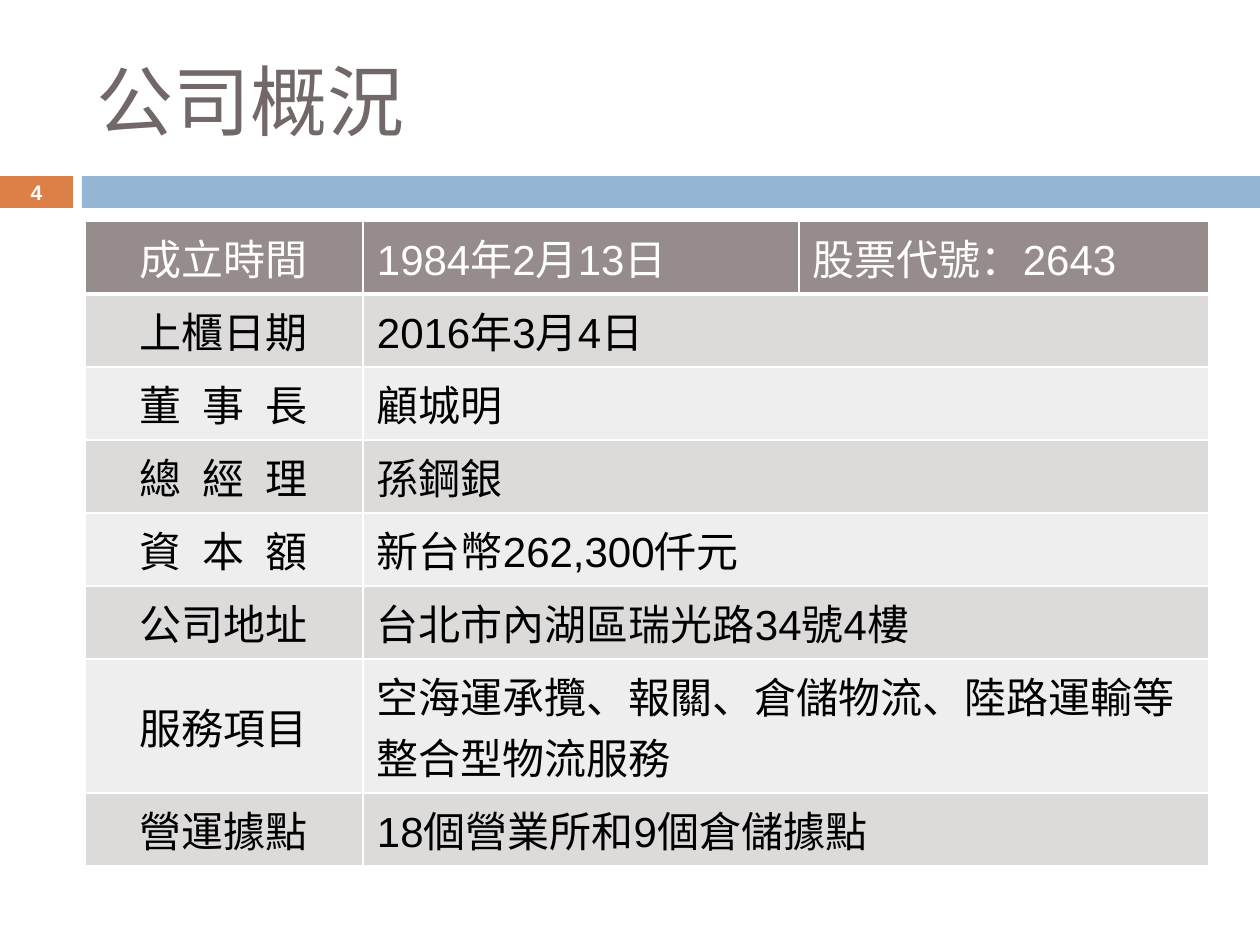
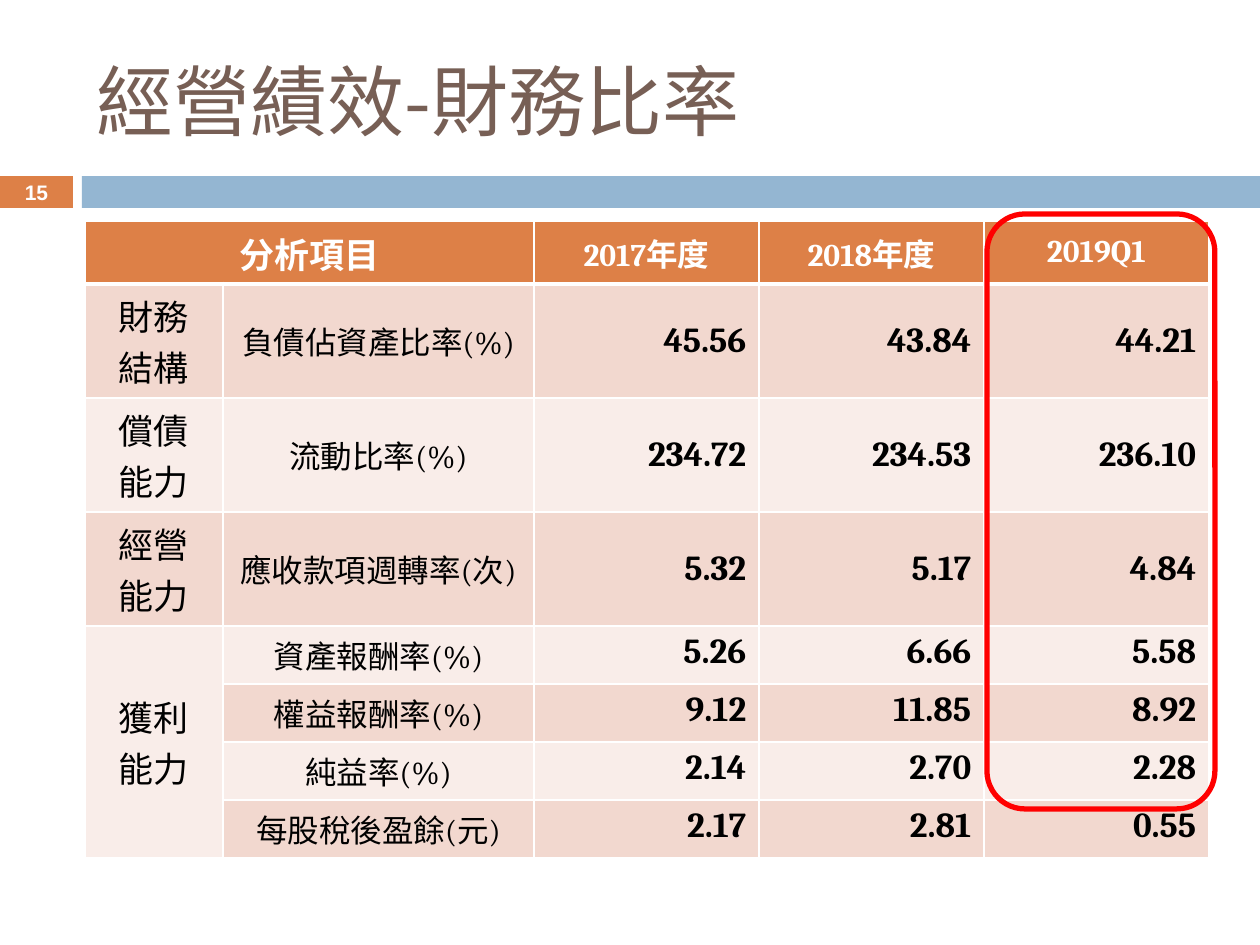
from lxml import etree
from pptx import Presentation
from pptx.dml.color import RGBColor
from pptx.enum.shapes import MSO_SHAPE
from pptx.enum.text import MSO_ANCHOR, MSO_AUTO_SIZE, PP_ALIGN
from pptx.oxml.ns import qn
from pptx.util import Pt

RECT, ROUND_RECT = MSO_SHAPE.RECTANGLE, MSO_SHAPE.ROUNDED_RECTANGLE
MIDDLE, TOP = MSO_ANCHOR.MIDDLE, MSO_ANCHOR.TOP
LEFT, CENTER, RIGHT = PP_ALIGN.LEFT, PP_ALIGN.CENTER, PP_ALIGN.RIGHT
NO_FIT = MSO_AUTO_SIZE.NONE

PX = 7257
CJK = "Noto Sans CJK SC"
WHITE = RGBColor(0xFF, 0xFF, 0xFF)
BLACK = RGBColor(0x00, 0x00, 0x00)
RED = RGBColor(0xFF, 0x00, 0x00)
ORANGE = RGBColor(0xDD, 0x80, 0x47)
BLUE = RGBColor(0x94, 0xB6, 0xD2)
TAUPE = RGBColor(0x72, 0x68, 0x68)
BROWN = RGBColor(0x77, 0x5F, 0x55)
GREY = RGBColor(0x96, 0x8C, 0x8C)
GREY_BANDS = RGBColor(0xDD, 0xDA, 0xDA), RGBColor(0xEF, 0xEE, 0xEE)
ORANGE_BANDS = RGBColor(0xF2, 0xD8, 0xCF), RGBColor(0xF9, 0xED, 0xE9)


def style(tf, size, font, color, bold=False, align=LEFT):
    for p in tf.paragraphs:
        p.alignment = align
        for r in p.runs:
            r.font.size = Pt(size)
            r.font.name = font
            r.font.bold = bold
            r.font.color.rgb = color
            etree.SubElement(r.font._element, qn("a:ea"), typeface=CJK)


def add_grid(s, rows, widths, heights, header, bands):
    frame = s.shapes.add_table(len(rows), len(widths), 85 * PX, 221 * PX,
                               sum(widths) * PX, sum(heights) * PX)
    table = frame.table
    for column, width in zip(table.columns, widths):
        column.width = width * PX
    for i, (row, height) in enumerate(zip(rows, heights)):
        table.rows[i].height = height * PX
        for j, text in enumerate(row):
            cell = table.cell(i, j)
            cell.text = text
            cell.vertical_anchor = MIDDLE
            tcPr = cell._tc.get_or_add_tcPr()
            for side in "LRTB":
                thick = (i, side) in ((0, "B"), (1, "T"))
                ln = etree.SubElement(tcPr, qn("a:ln" + side), w=str(Pt(3 if thick else 1)))
                fill = etree.SubElement(ln, qn("a:solidFill"))
                etree.SubElement(fill, qn("a:srgbClr"), val=str(WHITE))
            cell.fill.solid()
            cell.fill.fore_color.rgb = bands[(i - 1) % 2] if i else header
    return table


prs = Presentation()
prs.slide_width = 1260 * PX
prs.slide_height = 945 * PX
layout = prs.slide_layouts[5]

slides = []
for title, number, color in (("公司概況", "4", TAUPE), ("經營績效-財務比率", "15", BROWN)):
    s = prs.slides.add_slide(layout)
    slides.append(s)
    sp = s.shapes.title
    sp.left, sp.top, sp.width, sp.height = 84 * PX, 32 * PX, 1124 * PX, 136 * PX
    tf = sp.text_frame
    tf.text = title
    tf.auto_size = NO_FIT
    tf.vertical_anchor = MIDDLE
    style(tf, 44, CJK, color)

    sp = s.shapes.add_textbox(0, 175 * PX, 73 * PX, 34 * PX)
    tf = sp.text_frame
    tf.text = number
    tf.word_wrap = True
    tf.vertical_anchor = MIDDLE
    tf.margin_left = tf.margin_right = tf.margin_top = tf.margin_bottom = 0
    style(tf, 12, "Arial", WHITE, True, CENTER)

overview, ratios = slides

for left, width, color in ((0, 73, ORANGE), (82, 1178, BLUE)):
    bar = overview.shapes.add_shape(RECT, left * PX, 176 * PX, width * PX, 32 * PX)
    bar.shadow.inherit = False
    bar.fill.solid()
    bar.fill.fore_color.rgb = color
    bar.line.fill.background()
    layout.shapes.element.append(bar.element)

company = [
    ("成立時間", "1984年2月13日", "股票代號：2643"),
    ("上櫃日期", "2016年3月4日", ""),
    ("董 事 長", "顧城明", ""),
    ("總 經 理", "孫鋼銀", ""),
    ("資 本 額", "新台幣262,300仟元", ""),
    ("公司地址", "台北市內湖區瑞光路34號4樓", ""),
    ("服務項目", "空海運承攬、報關、倉儲物流、陸路運輸等整合型物流服務", ""),
    ("營運據點", "18個營業所和9個倉儲據點", ""),
]
table = add_grid(overview, company, (278, 436, 410), [73] * 6 + [134, 73], GREY, GREY_BANDS)
for i, row in enumerate(company):
    for j, text in enumerate(row):
        cell = table.cell(i, j)
        cell.margin_left = cell.margin_right = 14 * PX
        cell.margin_top = cell.margin_bottom = 6 * PX
        style(cell.text_frame, 24, "Arial", BLACK if i else WHITE, align=LEFT if j else CENTER)
        if " " in text:
            cell.text_frame.paragraphs[0].runs[0].font._element.set("spc", "333")
    if i:
        table.cell(i, 1).merge(table.cell(i, 2))

performance = [
    ("分析項目", "", "2017年度", "2018年度", "2019Q1"),
    ("財務\n結構", "負債佔資產比率(%)", "45.56", "43.84", "44.21"),
    ("償債\n能力", "流動比率(%)", "234.72", "234.53", "236.10"),
    ("經營\n能力", "應收款項週轉率(次)", "5.32", "5.17", "4.84"),
    ("獲利\n能力", "資產報酬率(%)", "5.26", "6.66", "5.58"),
    ("", "權益報酬率(%)", "9.12", "11.85", "8.92"),
    ("", "純益率(%)", "2.14", "2.70", "2.28"),
    ("", "每股稅後盈餘(元)", "2.17", "2.81", "0.55"),
]
table = add_grid(ratios, performance, (138, 311, 225, 225, 225),
                 [63] + [114] * 3 + [58] * 4, ORANGE, ORANGE_BANDS)
for i, row in enumerate(performance):
    for j in range(len(row)):
        cell = table.cell(i, j)
        value = i > 0 and j > 1
        size = 20 if value or j == 0 else 18
        style(cell.text_frame, size, "Cambria", BLACK if i else WHITE,
              value or i == 0, RIGHT if value else CENTER)
        if value and i > 3:
            cell.vertical_anchor = TOP
table.cell(0, 0).merge(table.cell(0, 1))
table.cell(4, 0).merge(table.cell(7, 0))

highlight = ratios.shapes.add_shape(ROUND_RECT, 987 * PX, 214 * PX, 228 * PX, 595 * PX)
highlight.shadow.inherit = False
highlight.fill.background()
highlight.line.color.rgb = RED
highlight.line.width = Pt(3)

prs.save("out.pptx")
